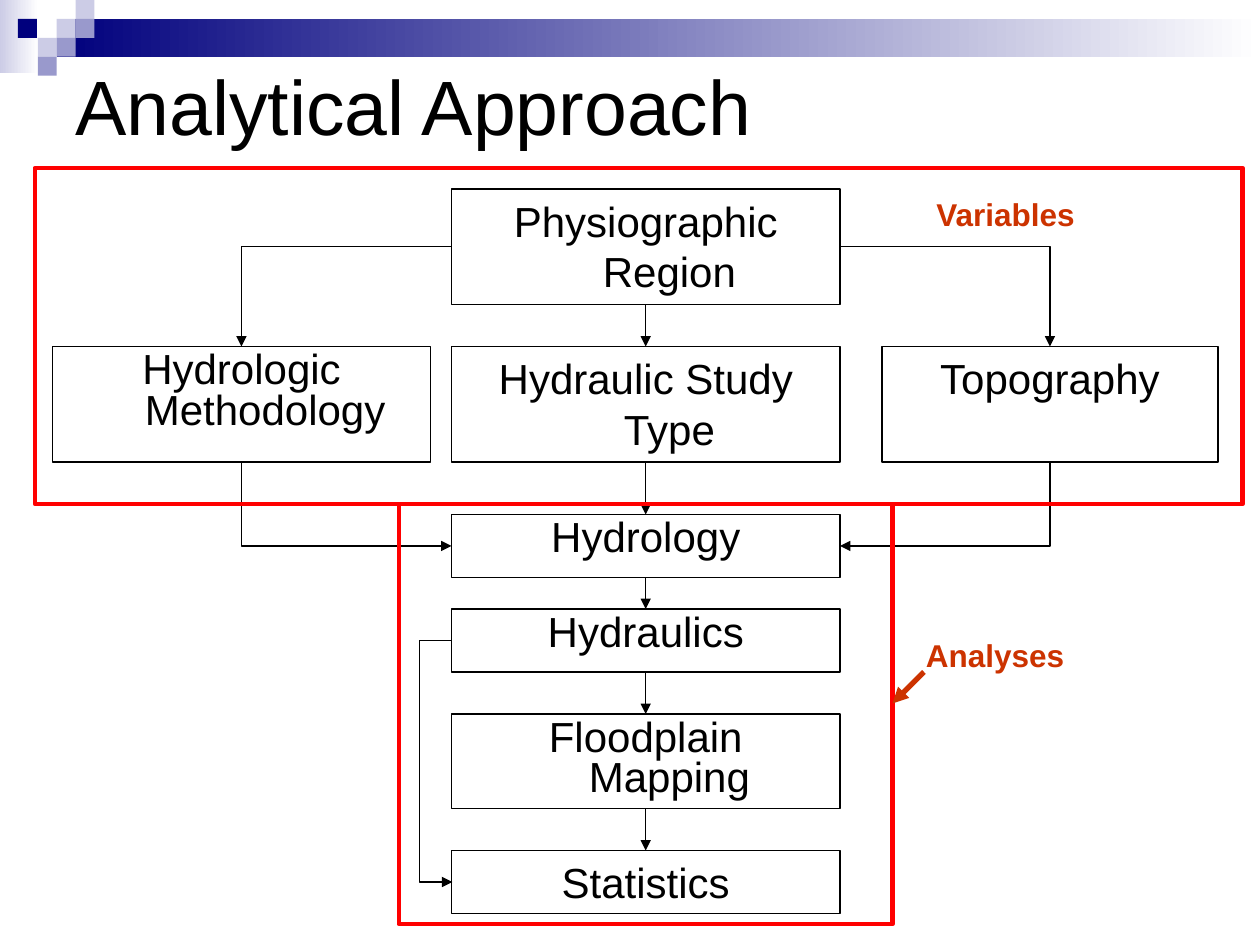
from dataclasses import dataclass

from pptx import Presentation
from pptx.dml.color import RGBColor
from pptx.enum.shapes import MSO_CONNECTOR, MSO_SHAPE
from pptx.enum.text import MSO_ANCHOR, PP_ALIGN
from pptx.oxml.ns import qn
from pptx.util import Pt
from lxml.etree import SubElement


@dataclass(frozen=True)
class Theme:
    font: str = "Arial"
    ink: str = "000000"
    white: str = "FFFFFF"
    navy: str = "00007D"
    lilac: str = "CCCCE6"
    violet: str = "9999CC"
    frame: str = "FF0000"
    accent: str = "CC3300"
    title: float = 44
    body: float = 24
    label: float = 18
    thin: float = 0.75
    thick: float = 2.75
    arrow: float = 3


THEME = Theme()


def rgb(value):
    return RGBColor.from_string(value)


def add_rect(s, box, fill=None, line=None, width=THEME.thin):
    """Add a rectangle; a pair of fill colours makes a left-to-right gradient."""
    sp = s.shapes.add_shape(MSO_SHAPE.RECTANGLE, *map(Pt, box))
    sp.shadow.inherit = False
    if fill is None:
        sp.fill.background()
    elif isinstance(fill, tuple):
        sp.fill.gradient()
        sp.fill.gradient_angle = 0
        for stop, color, position in zip(sp.fill.gradient_stops, fill, (0, 1)):
            stop.color.rgb = rgb(color)
            stop.position = position
    else:
        sp.fill.solid()
        sp.fill.fore_color.rgb = rgb(fill)
    if line:
        sp.line.color.rgb = rgb(line)
        sp.line.width = Pt(width)
    else:
        sp.line.fill.background()
    return sp


def write(sp, text, size, color=THEME.ink, bold=False, align=PP_ALIGN.LEFT,
          anchor=MSO_ANCHOR.TOP, spacing=None, hanging=0):
    tf = sp.text_frame
    tf.word_wrap = True
    tf.vertical_anchor = anchor
    p = tf.paragraphs[0]
    if hanging:
        pPr = p._p.get_or_add_pPr()
        pPr.set("marL", str(Pt(hanging)))
        pPr.set("indent", str(-Pt(hanging)))
    p.alignment = align
    if spacing:
        p.line_spacing = spacing
    r = p.add_run()
    r.text = text
    r.font.name = THEME.font
    r.font.size = Pt(size)
    r.font.bold = bold
    r.font.color.rgb = rgb(color)


def add_text(s, box, text, size, **style):
    write(s.shapes.add_textbox(*map(Pt, box)), text, size, **style)


def add_arrow(s, start, end, kind=MSO_CONNECTOR.STRAIGHT, color=THEME.ink, width=THEME.thin):
    cn = s.shapes.add_connector(kind, *map(Pt, (*start, *end)))
    cn.line.color.rgb = rgb(color)
    cn.line.width = Pt(width)
    SubElement(cn.line._get_or_add_ln(), qn("a:tailEnd"), type="triangle")
    SubElement(cn._element.spPr, qn("a:effectLst"))
    return cn


def add_corner(s, start, end, down_first=False):
    """Add an arrow with one right-angled bend."""
    (x1, y1), (x2, y2) = start, end
    if down_first:
        # A quarter turn about the centre makes the first leg vertical.
        cx, cy = (x1 + x2) / 2, (y1 + y2) / 2
        half_w, half_h = (y2 - y1) / 2, abs(x2 - x1) / 2
        side = 1 if x2 > x1 else -1
        start = cx + side * half_w, cy - half_h
        end = cx - side * half_w, cy + half_h
    cn = add_arrow(s, start, end, MSO_CONNECTOR.ELBOW)
    spPr = cn._element.spPr
    spPr.find(qn("a:prstGeom")).set("prst", "bentConnector2")
    if down_first:
        degrees = 270 if side > 0 else 90
        spPr.find(qn("a:xfrm")).set("rot", str(degrees * 60000))


def add_side_loop(s, start, drop, reach):
    """Add an arrow that leaves to the left, runs down and comes back."""
    x, y = start
    span = 0.5
    cn = add_arrow(s, start, (x + span, y + drop), MSO_CONNECTOR.ELBOW)
    guides = cn._element.spPr.find(qn("a:prstGeom")).get_or_add_avLst()
    SubElement(guides, qn("a:gd"), name="adj1", fmla=f"val {round(-reach / span * 100000)}")


def add_header(s, box):
    x, y, w, h = box
    cell = h / 4
    add_rect(s, (x, y, 22, h - 1.4), (THEME.lilac, THEME.white))
    add_rect(s, (x + 3 * cell, y + cell, w - 3 * cell, 2 * cell), (THEME.navy, THEME.white))
    squares = [(3, 1, THEME.lilac), (4, 0, THEME.lilac), (4, 1, THEME.violet),
               (2, 2, THEME.lilac), (0.95, 1, THEME.navy), (3, 2, THEME.violet),
               (2, 3, THEME.violet)]
    for col, row, color in squares:
        add_rect(s, (x + col * cell, y + row * cell, cell, cell), color)


def add_step(s, box, text, spacing=None):
    sp = add_rect(s, box, line=THEME.ink)
    write(sp, text, THEME.body, align=PP_ALIGN.CENTER, spacing=spacing, hanging=27)


def add_flow(s, box):
    """Place the flow chart: a tree of variables that feeds a column of analyses."""
    x, y, w, h = box
    column = x + 228, 222
    left, right = (x, 216), (x + w - 192, 192)
    tight = 0.8
    steps = {
        "Physiographic Region": (column, 0, 66, None),
        "Hydrologic Methodology": (left, 90, 66, tight),
        "Hydraulic Study Type": (column, 90, 66, None),
        "Topography": (right, 90, 66, None),
        "Hydrology": (column, 186, 36, tight),
        "Hydraulics": (column, 240, 36, tight),
        "Floodplain Mapping": (column, 300, 54, tight),
        "Statistics": (column, h - 36, 36, None),
    }
    for text, ((bx, bw), top, height, spacing) in steps.items():
        add_step(s, (bx, y + top, bw, height), text, spacing)

    stack = [(y + top, height) for place, top, height, _ in steps.values() if place == column]
    middle = column[0] + column[1] / 2
    for (top, height), (next_top, _) in zip(stack, stack[1:]):
        add_arrow(s, (middle, top + height), (middle, next_top))

    region_y, hydrology_y, hydraulics_y, statistics_y = (
        stack[i][0] + stack[i][1] / 2 for i in (0, 2, 3, 5))
    for (bx, bw), edge in ((left, column[0]), (right, sum(column))):
        center = bx + bw / 2
        add_corner(s, (edge, region_y), (center, y + 90))
        add_corner(s, (center, y + 156), (edge, hydrology_y), down_first=True)
    add_side_loop(s, (column[0], hydraulics_y), statistics_y - hydraulics_y, 18)


def add_group_frame(s, box, label, label_at):
    add_rect(s, box, line=THEME.frame, width=THEME.thick)
    add_text(s, (*label_at, 163.5, 29), label, THEME.label, color=THEME.accent, bold=True)


def main():
    prs = Presentation()
    prs.slide_width, prs.slide_height = Pt(720), Pt(540)
    s = prs.slides.add_slide(prs.slide_layouts[6])
    add_header(s, (0, 0, 720, 43.2))
    add_text(s, (36, 6, 648, 108), "Analytical Approach", THEME.title, anchor=MSO_ANCHOR.MIDDLE)
    add_flow(s, (30, 108, 666, 414))
    add_group_frame(s, (20, 96, 690, 192), "Variables", (528, 108))
    add_group_frame(s, (228, 288, 282, 240), "Analyses", (522, 360))
    add_arrow(s, (528, 384), (510, 402), color=THEME.accent, width=THEME.arrow)
    prs.save("out.pptx")


if __name__ == "__main__":
    main()
